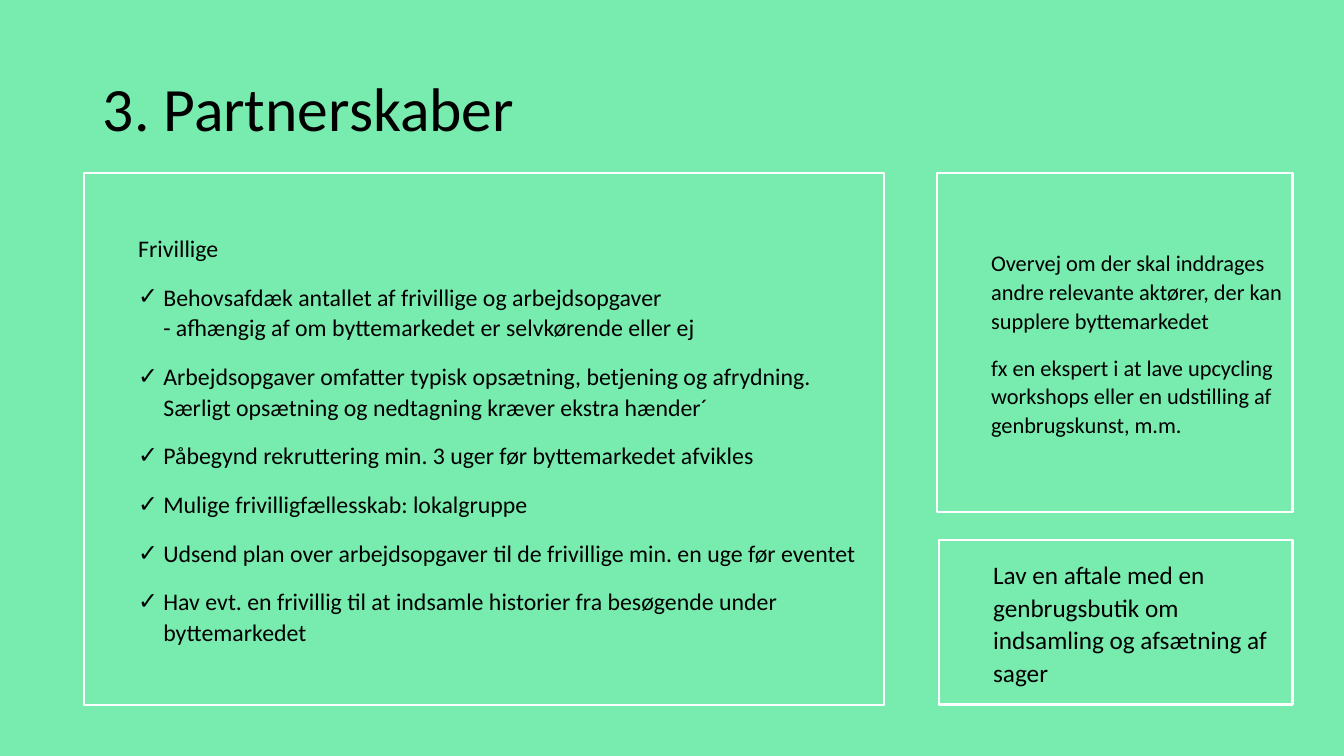
from dataclasses import dataclass

from lxml import etree
from pptx import Presentation
from pptx import util as u
from pptx.dml import color
from pptx.enum import shapes, text
from pptx.oxml import ns


@dataclass(frozen=True)
class Theme:
    """Colours, font and type sizes of the slide."""
    font: str = "Calibri"
    ink: color.RGBColor = color.RGBColor(0, 0, 0)
    mint: color.RGBColor = color.RGBColor(0x78, 0xEB, 0xAE)
    frame: color.RGBColor = color.RGBColor(255, 255, 255)
    title: int = 44
    checklist: int = 17
    actors: int = 16
    agreement: int = 18


THEME = Theme()

VOLUNTEER_TASKS = [
    "Behovsafdæk antallet af frivillige og arbejdsopgaver\n"
    "- afhængig af om byttemarkedet er selvkørende eller ej",
    "Arbejdsopgaver omfatter typisk opsætning, betjening og afrydning. "
    "Særligt opsætning og nedtagning kræver ekstra hænder´",
    "Påbegynd rekruttering min. 3 uger før byttemarkedet afvikles",
    "Mulige frivilligfællesskab: lokalgruppe",
    "Udsend plan over arbejdsopgaver til de frivillige min. en uge før eventet",
    "Hav evt. en frivillig til at indsamle historier fra besøgende under byttemarkedet",
]
ACTORS = [
    "Overvej om der skal inddrages andre relevante aktører, der kan supplere byttemarkedet",
    "fx en ekspert i at lave upcycling workshops eller en udstilling af genbrugskunst, m.m.",
]
AGREEMENT = ["Lav en aftale med en genbrugsbutik om indsamling og afsætning af sager"]


def place(sp, box):
    """Move a shape to a box of left, top, width and height in inches."""
    sp.left, sp.top, sp.width, sp.height = (u.Inches(v) for v in box)


def add_text(p, words, size):
    """Add words to a paragraph run by run, with a break at each newline."""
    for i, line in enumerate(words.split("\n")):
        if i:
            p.add_line_break()
        r = p.add_run()
        r.text = line
        r.font.name = THEME.font
        r.font.size = u.Pt(size)
        r.font.color.rgb = THEME.ink


def format_paragraph(p, checked):
    """Set spacing and indent, and give the paragraph a tick or no bullet."""
    p.level = 1
    p.alignment = text.PP_ALIGN.LEFT
    p.line_spacing = 1.07
    p.space_before = u.Pt(5)
    p.space_after = u.Pt(8)
    pPr = p._p.get_or_add_pPr()
    pPr.set("marL", str(u.Inches(0.75 if checked else 0.5)))
    pPr.set("indent", str(u.Inches(-0.25 if checked else 0)))
    if checked:
        etree.SubElement(pPr, ns.qn("a:buChar")).set("char", "✓")
    else:
        etree.SubElement(pPr, ns.qn("a:buNone"))


def fill_panel(sp, items, size):
    """Frame a panel in white and write its (words, checked) items."""
    sp.fill.background()
    sp.line.color.rgb = THEME.frame
    sp.line.width = u.Pt(1.5)
    tf = sp.text_frame
    tf.word_wrap = True
    tf.auto_size = text.MSO_AUTO_SIZE.NONE
    tf.vertical_anchor = text.MSO_ANCHOR.MIDDLE
    tf.margin_left, tf.margin_right = u.Inches(0.04), u.Inches(0.1)
    tf.margin_top = tf.margin_bottom = u.Inches(0.05)
    for i, (words, checked) in enumerate(items):
        p = tf.add_paragraph() if i else tf.paragraphs[0]
        add_text(p, words, size)
        format_paragraph(p, checked)


def add_title(s, box, words):
    """Write the slide title in the title placeholder."""
    sp = s.shapes.title
    place(sp, box)
    tf = sp.text_frame
    tf.word_wrap = True
    tf.auto_size = text.MSO_AUTO_SIZE.NONE
    tf.vertical_anchor = text.MSO_ANCHOR.MIDDLE
    p = tf.paragraphs[0]
    p.alignment = text.PP_ALIGN.LEFT
    p.line_spacing = 0.9
    add_text(p, words, THEME.title)


def add_checklist(s, box, heading, tasks):
    """Write a heading and ticked tasks in the body placeholder."""
    sp = s.placeholders[1]
    place(sp, box)
    items = [(heading, False)] + [(task, True) for task in tasks]
    fill_panel(sp, items, THEME.checklist)


def add_note(s, box, paragraphs, size):
    """Add a framed note with plain paragraphs."""
    sp = s.shapes.add_shape(shapes.MSO_SHAPE.RECTANGLE, *(u.Inches(v) for v in box))
    sp.shadow.inherit = False
    fill_panel(sp, [(words, False) for words in paragraphs], size)


def add_partnership_slide(prs):
    """Build the partnership slide on a mint background."""
    s = prs.slides.add_slide(prs.slide_layouts[1])
    s.background.fill.solid()
    s.background.fill.fore_color.rgb = THEME.mint
    add_title(s, (0.92, 0.38, 11.5, 1.45), "3. Partnerskaber")
    add_checklist(s, (0.83, 1.72, 7.94, 5.27), "Frivillige", VOLUNTEER_TASKS)
    add_note(s, (9.29, 1.72, 3.53, 3.36), ACTORS, THEME.actors)
    add_note(s, (9.31, 5.36, 3.51, 1.63), AGREEMENT, THEME.agreement)


def main():
    """Create and save the presentation."""
    prs = Presentation()
    prs.slide_width, prs.slide_height = u.Inches(13.33), u.Inches(7.5)
    add_partnership_slide(prs)
    prs.save("out.pptx")


if __name__ == "__main__":
    main()
